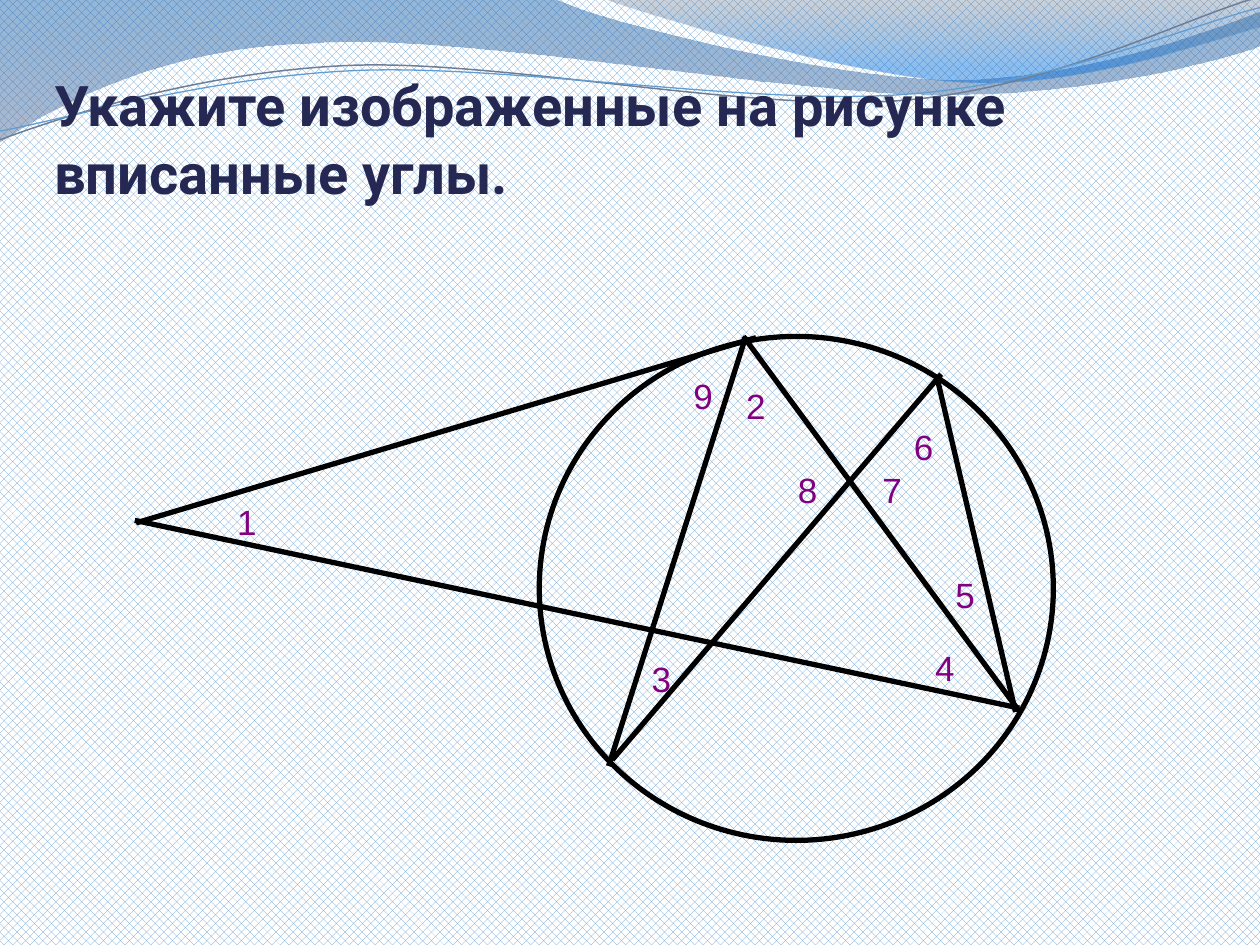
from lxml.etree import Element, SubElement
from pptx import Presentation
from pptx.dml.color import RGBColor
from pptx.enum.dml import MSO_PATTERN
from pptx.enum.shapes import MSO_CONNECTOR, MSO_SHAPE
from pptx.enum.text import MSO_ANCHOR, MSO_AUTO_SIZE, PP_ALIGN
from pptx.oxml.ns import qn
from pptx.util import Inches, Pt

COLORS = {
    "paper": "FFFFFF", "hatch": "629DD1", "title": "242852",
    "figure": "000000", "label": "800080",
    "wave_top": "125EAA", "wave_end": "697FA4",
    "crest_top": "596982", "crest_end": "0670DA",
    "thread_gray": "707E95", "thread_blue": "629DD1",
}

# Outlines: a point is a straight step, six numbers are a Bezier step.
WAVE = [(0, 0), (4.4, -0.01), (4.76, 0.17, 6.64, 0.63, 7.58, 0.63),
        (8.53, 0.63, 9.58, 0.26, 10, 0.09), (10.01, 0.36),
        (9.83, 0.44, 8.7, 0.76, 7.46, 0.75),
        (6.22, 0.75, 3.82, 0.28, 2.57, 0.34),
        (1.29, 0.36, 0.46, 0.83, -0.01, 1.13), (0, 0)]
CREST = [(4.79, -0.01), (5.09, 0.11, 6.82, 0.62, 7.69, 0.65),
         (8.56, 0.69, 9.61, 0.32, 10, 0.21), (10, 0), (4.79, -0.01)]
GRAY_THREAD = [(0, 1.11), (0.48, 0.93, 1.58, 0.57, 2.77, 0.52),
               (3.95, 0.47, 5.93, 0.89, 7.13, 0.8),
               (8.33, 0.71, 9.38, 0.15, 9.98, -0.02)]
BLUE_THREAD = [(0, 1.04), (0.47, 0.96, 1.64, 0.61, 2.83, 0.56),
               (4.03, 0.51, 5.97, 0.84, 7.17, 0.75),
               (8.36, 0.67, 9.41, 0.21, 10, 0.06)]

SEGMENTS = [
    ((5.9, 2.67), (8.1, 5.66)), ((6, 2.68), (1.08, 4.15)),
    ((8.09, 5.62), (1.07, 4.13)), ((5.92, 2.67), (4.83, 6.08)),
    ((4.86, 6.03), (7.47, 2.97)), ((7.44, 3.01), (8.06, 5.65)),
]
# Left and top of the labels of angles 1 to 9
LABELS = [(1.88, 3.92), (5.92, 3), (5.17, 5.17), (7.42, 5.08), (7.58, 4.5),
          (7.25, 3.33), (7, 3.67), (6.33, 3.67), (5.5, 2.92)]


def rgb(name):
    return RGBColor.from_string(COLORS[name])


def add_outline(s, steps, close):
    """Build a freeform on the end points, then bend its Bezier steps."""
    first, *rest = [(Inches(step[-2]), Inches(step[-1])) for step in steps]
    builder = s.shapes.build_freeform(*first)
    builder.add_line_segments(rest, close=close)
    sp = builder.convert_to_shape()
    sp.shadow.inherit = False
    segments = list(sp._element.spPr.iter(qn("a:lnTo")))
    for segment, step in zip(segments, steps[1:]):
        if len(step) == 6:
            bend(segment, step, sp.left, sp.top)
    return sp


def bend(segment, step, left, top):
    """Replace a straight segment by a Bezier curve."""
    curve = Element(qn("a:cubicBezTo"))
    for x, y in zip(step[::2], step[1::2]):
        SubElement(curve, qn("a:pt"), x=str(Inches(x) - left), y=str(Inches(y) - top))
    segment.getparent().replace(segment, curve)


def add_wave(s, steps, stops):
    """Add a vertical gradient area; stops hold position, colour, opacity %."""
    sp = add_outline(s, steps, close=True)
    sp.line.fill.background()
    sp.fill.gradient()
    sp.fill.gradient_angle = 270
    for stop, (position, color, _) in zip(sp.fill.gradient_stops, stops):
        stop.position = position
        stop.color.rgb = rgb(color)
    for clr, (_, _, opacity) in zip(sp._element.spPr.iter(qn("a:srgbClr")), stops):
        SubElement(clr, qn("a:alpha"), val=str(opacity * 1000))


def add_thread(s, steps, color, width):
    sp = add_outline(s, steps, close=False)
    sp.fill.background()
    set_line(sp, color, width)


def set_line(sp, color="figure", width=3):
    sp.line.color.rgb = rgb(color)
    sp.line.width = Pt(width)


def set_font(p, name, size, color, bold=False):
    p.font.name = name
    p.font.size = Pt(size)
    p.font.bold = bold
    p.font.color.rgb = rgb(color)


def set_title(s, text):
    title = s.shapes.title
    title.left, title.top = Inches(0.43), Inches(0.17)
    title.width, title.height = Inches(9.29), Inches(1.46)
    tf = title.text_frame
    tf.text = text
    tf.auto_size = MSO_AUTO_SIZE.NONE
    tf.word_wrap = True
    tf.vertical_anchor = MSO_ANCHOR.BOTTOM
    tf.margin_left = tf.margin_right = tf.margin_bottom = 0
    p = tf.paragraphs[0]
    p.alignment = PP_ALIGN.LEFT
    set_font(p, "Roboto", 32, "title", bold=True)
    # In front of the waves
    s.shapes._spTree.append(title._element)


def add_circle(s, left, top, width, height):
    sp = s.shapes.add_shape(MSO_SHAPE.OVAL, Inches(left), Inches(top),
                            Inches(width), Inches(height))
    sp.shadow.inherit = False
    sp.fill.background()
    set_line(sp)


def add_segment(s, start, end):
    line = s.shapes.add_connector(MSO_CONNECTOR.STRAIGHT,
                                  *[Inches(v) for v in start + end])
    SubElement(line._element.spPr, qn("a:effectLst"))
    set_line(line)


def add_label(s, text, left, top):
    box = s.shapes.add_textbox(Inches(left), Inches(top), Inches(0.16), Inches(0.33))
    tf = box.text_frame
    tf.word_wrap = False
    tf.margin_left = tf.margin_right = 0
    tf.text = text
    p = tf.paragraphs[0]
    p.alignment = PP_ALIGN.CENTER
    set_font(p, "Arial", 20, "label")


def main():
    prs = Presentation()
    prs.slide_width, prs.slide_height = Inches(10), Inches(7.5)
    s = prs.slides.add_slide(prs.slide_layouts[5])

    fill = s.background.fill
    fill.patterned()
    fill.pattern = MSO_PATTERN.PERCENT_50
    fill.fore_color.rgb = rgb("hatch")
    fill.back_color.rgb = rgb("paper")

    add_wave(s, WAVE, [(0, "wave_top", 45), (1, "wave_end", 55)])
    add_wave(s, CREST, [(0, "crest_top", 30), (0.8, "crest_end", 45)])
    add_thread(s, GRAY_THREAD, "thread_gray", 0.85)
    add_thread(s, BLUE_THREAD, "thread_blue", 0.75)
    set_title(s, "Укажите изображенные на рисунке вписанные углы.")

    add_circle(s, 4.28, 2.67, 4.08, 4)
    for start, end in SEGMENTS:
        add_segment(s, start, end)
    for number, (left, top) in enumerate(LABELS, 1):
        add_label(s, str(number), left, top)

    prs.save("out.pptx")


if __name__ == "__main__":
    main()
